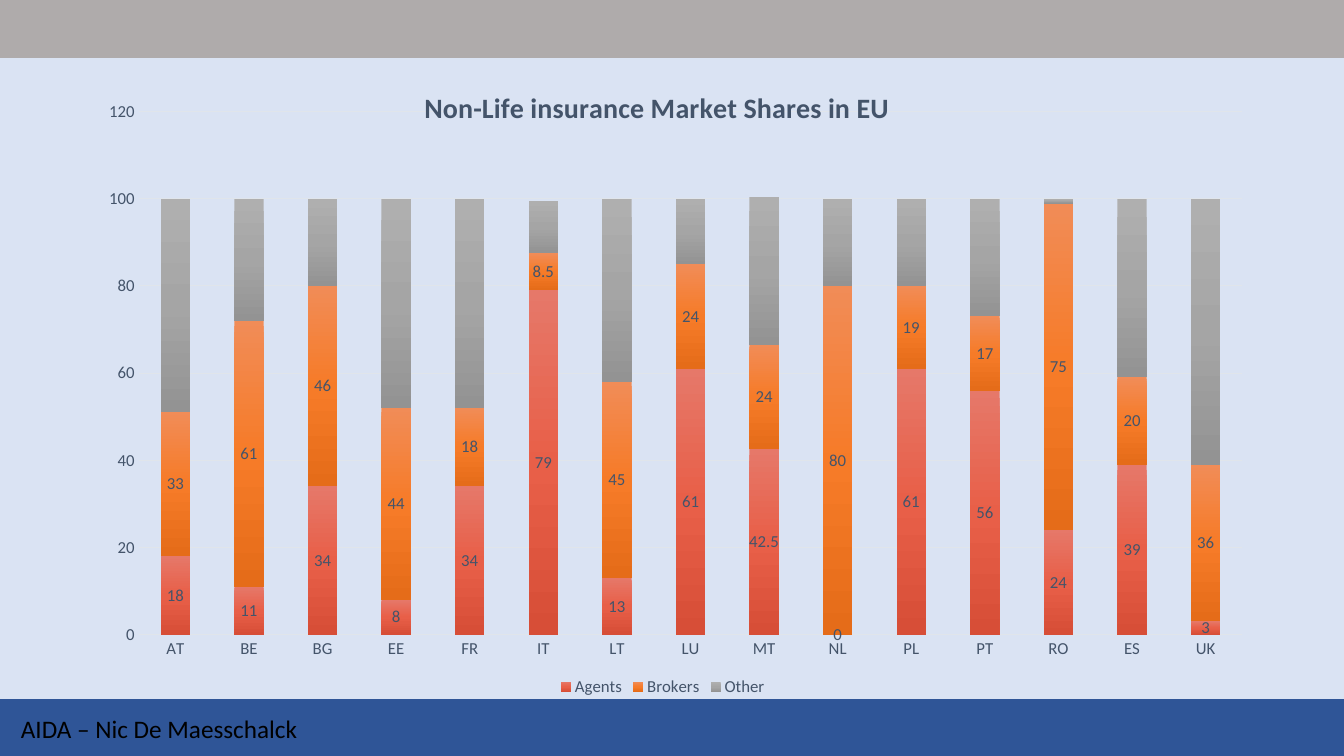
"""Build the slide on non-life insurance market shares in the EU."""
from dataclasses import dataclass

from pptx import Presentation
from pptx.chart.data import CategoryChartData
from pptx.dml.color import RGBColor
from pptx.enum.chart import (XL_CHART_TYPE, XL_LABEL_POSITION,
                             XL_LEGEND_POSITION, XL_TICK_MARK)
from pptx.enum.shapes import MSO_SHAPE
from pptx.oxml import parse_xml
from pptx.oxml.ns import nsdecls
from pptx.util import Pt

EMU_PER_PX = 12192000 / 1344
SLIDE_WIDTH, SLIDE_HEIGHT = 1344, 756

COUNTRIES = ["AT", "BE", "BG", "EE", "FR", "IT", "LT", "LU",
             "MT", "NL", "PL", "PT", "RO", "ES", "UK"]
SHARES = {
    "Agents": [18, 11, 34, 8, 34, 79, 13, 61, 42.5, 0, 61, 56, 24, 39, 3],
    "Brokers": [33, 61, 46, 44, 18, 8.5, 45, 24, 24, 80, 19, 17, 75, 20, 36],
    "Other": [49, 28, 20, 48, 48, 12, 42, 15, 34, 20, 20, 27, 1, 41, 61],
}
LABELLED = ("Agents", "Brokers")


@dataclass(frozen=True)
class Theme:
    """Colours, font and type sizes of the slide."""
    font: str = "Calibri"
    background: str = "DAE3F3"
    header: str = "AFABAB"
    footer: str = "2F5597"
    author: str = "000000"
    chart_text: str = "44546A"
    grid: str = "E0E5EB"
    gradients: tuple = (("E67869", "E85F48", "D74E37"),
                        ("F18C57", "F67B28", "E56C19"),
                        ("AFAFAF", "A5A5A5", "939393"))
    title_size: int = 20
    author_size: int = 18
    chart_size: int = 12


def px(length):
    """Turn pixels into EMU."""
    return round(length * EMU_PER_PX)


def manual_layout(x, y, size=None):
    """Return a chart layout element given in fractions of the chart."""
    target = '<c:layoutTarget val="inner"/>' if size else ""
    extent = f'<c:w val="{size[0]}"/><c:h val="{size[1]}"/>' if size else ""
    return parse_xml(
        f'<c:layout {nsdecls("c")}><c:manualLayout>{target}'
        '<c:xMode val="edge"/><c:yMode val="edge"/>'
        f'<c:x val="{x}"/><c:y val="{y}"/>{extent}</c:manualLayout></c:layout>')


def vertical_gradient(colours):
    """Return a top-to-bottom gradient with evenly spaced stops."""
    step = 100000 // (len(colours) - 1)
    stops = "".join(
        f'<a:gs pos="{index * step}"><a:srgbClr val="{colour}"/></a:gs>'
        for index, colour in enumerate(colours))
    return parse_xml(f'<a:gradFill {nsdecls("a")}><a:gsLst>{stops}</a:gsLst>'
                     '<a:lin ang="5400000" scaled="0"/></a:gradFill>')


class SlideBuilder:
    """Draws themed elements on the current slide."""

    def __init__(self, slide, theme):
        """Keep the slide and theme, and paint the background."""
        self.slide, self.theme = slide, theme
        self.paint(slide.background.fill, theme.background)

    def paint(self, fill, colour):
        """Give a fill one solid colour."""
        fill.solid()
        fill.fore_color.rgb = RGBColor.from_string(colour)

    def rule(self, line, colour, width):
        """Set the colour and width of a line."""
        line.color.rgb = RGBColor.from_string(colour)
        line.width = Pt(width)

    def style(self, font, size, colour, bold=False):
        """Set the typeface, size, colour and weight of a font."""
        font.name, font.size, font.bold = self.theme.font, Pt(size), bold
        font.color.rgb = RGBColor.from_string(colour)

    def band(self, top, height, colour):
        """Draw a band across the full slide width."""
        band = self.slide.shapes.add_shape(
            MSO_SHAPE.RECTANGLE, 0, px(top), px(SLIDE_WIDTH), px(height))
        band.shadow.inherit = False
        self.paint(band.fill, colour)
        self.rule(band.line, colour, 1)

    def text(self, words, left, top, width, height):
        """Add a line of text in the author style."""
        frame = self.slide.shapes.add_textbox(
            px(left), px(top), px(width), px(height)).text_frame
        frame.word_wrap = True
        frame.text = words
        self.style(frame.paragraphs[0].font, self.theme.author_size,
                   self.theme.author)

    def chart(self, title, categories, shares, left, top, width, height):
        """Add the stacked column chart."""
        data = CategoryChartData()
        data.categories = categories
        for name, values in shares.items():
            data.add_series(name, values)
        chart = self.slide.shapes.add_chart(
            XL_CHART_TYPE.COLUMN_STACKED, px(left), px(top), px(width),
            px(height), data).chart
        self.style(chart.font, self.theme.chart_size, self.theme.chart_text)
        self.chart_title(chart, title)
        self.axes(chart)
        self.columns(chart.plots[0])
        chart.has_legend = True
        chart.legend.position = XL_LEGEND_POSITION.BOTTOM
        chart.legend.include_in_layout = False
        self.style(chart.legend.font, self.theme.chart_size,
                   self.theme.chart_text)
        plot_area = chart.plots[0]._element.getparent()
        for layout in plot_area.xpath("c:layout"):
            plot_area.remove(layout)
        plot_area.insert(0, manual_layout(0.048, 0.085, (0.952, 0.812)))

    def chart_title(self, chart, title):
        """Place the bold title over the plot."""
        chart.has_title = True
        heading = chart.chart_title
        heading.text_frame.text = title
        self.style(heading.text_frame.paragraphs[0].font,
                   self.theme.title_size, self.theme.chart_text, bold=True)
        heading.include_in_layout = False
        for layout in heading._element.xpath("c:layout"):
            heading._element.remove(layout)
        heading._element.xpath("c:tx")[0].addnext(manual_layout(0.29, 0.04))

    def axes(self, chart):
        """Style both axes and the gridlines."""
        shares_axis = chart.value_axis
        for axis in (chart.category_axis, shares_axis):
            axis.major_tick_mark = axis.minor_tick_mark = XL_TICK_MARK.NONE
            self.style(axis.tick_labels.font, self.theme.chart_size,
                       self.theme.chart_text)
        self.rule(chart.category_axis.format.line, self.theme.grid, 0.75)
        shares_axis.format.line.fill.background()
        shares_axis.minimum_scale, shares_axis.maximum_scale = 0, 120
        shares_axis.major_unit = 20
        shares_axis.has_major_gridlines = True
        self.rule(shares_axis.major_gridlines.format.line,
                  self.theme.grid, 0.75)

    def columns(self, plot):
        """Fill the stacked columns and label the intermediaries."""
        plot.gap_width, plot.overlap = 150, 100
        plot.vary_by_categories = False
        for series, colours in zip(plot.series, self.theme.gradients):
            series.invert_if_negative = False
            series._element.get_or_add_spPr().insert(
                0, vertical_gradient(colours))
            if series.name in LABELLED:
                labels = series.data_labels
                labels.show_value = True
                labels.position = XL_LABEL_POSITION.CENTER
                self.style(labels.font, self.theme.chart_size,
                           self.theme.chart_text)


def main():
    """Build and save the presentation."""
    presentation = Presentation()
    presentation.slide_width = px(SLIDE_WIDTH)
    presentation.slide_height = px(SLIDE_HEIGHT)
    theme = Theme()
    builder = SlideBuilder(
        presentation.slides.add_slide(presentation.slide_layouts[6]), theme)
    builder.band(1, 56, theme.header)
    builder.band(700, 56, theme.footer)
    builder.text("AIDA – Nic De Maesschalck", 11, 708, 302, 40)
    builder.chart("Non-Life insurance Market Shares in EU", COUNTRIES, SHARES,
                  83, 57, 1160, 644)
    presentation.save("out.pptx")


if __name__ == "__main__":
    main()
